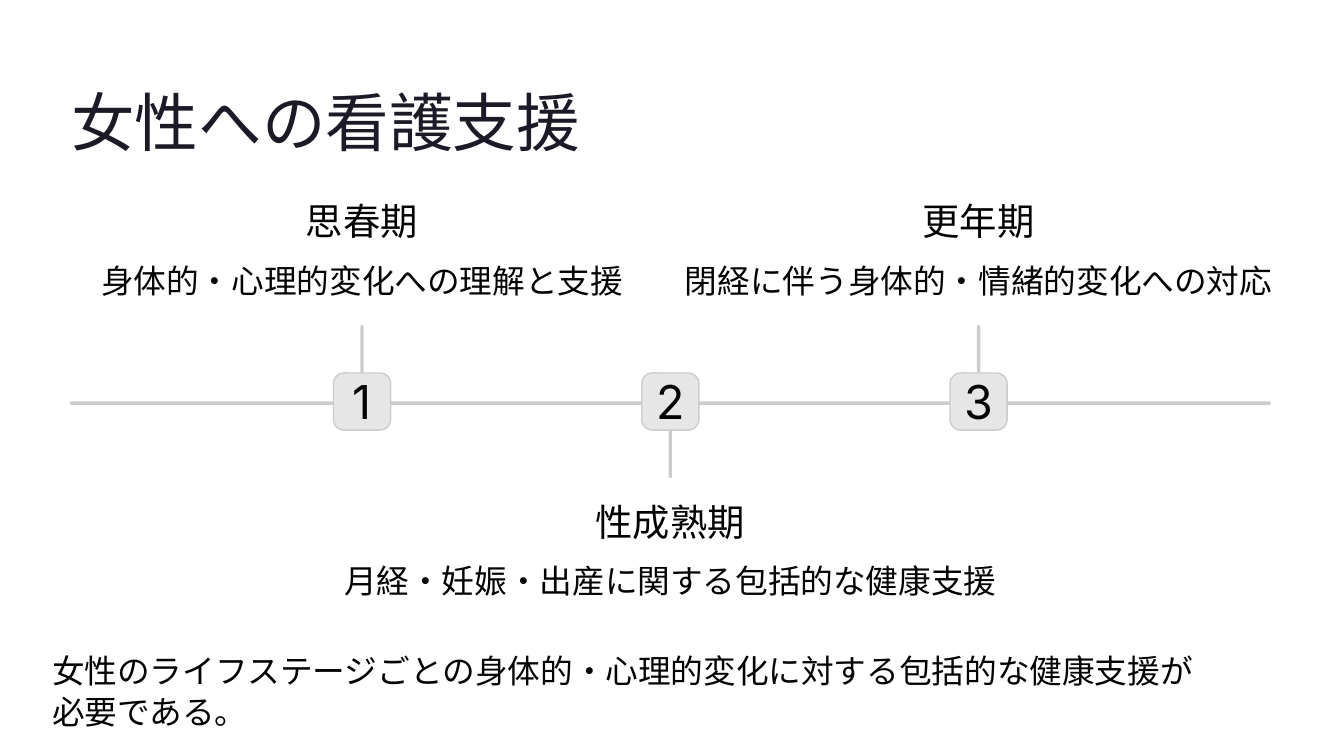
from pptx import Presentation
from pptx.dml.color import RGBColor
from pptx.enum.shapes import MSO_SHAPE
from pptx.enum.text import PP_ALIGN
from pptx.util import Inches, Pt

ROUNDED = MSO_SHAPE.ROUNDED_RECTANGLE
LEFT, CENTER = PP_ALIGN.LEFT, PP_ALIGN.CENTER

INK, TITLE_INK = "030303", "1B1B27"
BAR_GRAY, MARKER_GRAY = "CCCCCC", "E6E6E6"

FIRST_CENTER, STAGE_STEP = 4.31, 3.67
AXIS_TOP, BAR_WIDTH = 4.78, 0.04
STEM_LENGTH, MARKER_SIZE = 0.91, 0.68
TEXT_ABOVE, TEXT_BELOW = 2.42, 6.0

# Name, support and the width that keeps the support on one line
STAGES = [
    ("思春期", "身体的・心理的変化への理解と支援", 6.35),
    ("性成熟期", "月経・妊娠・出産に関する包括的な健康支援", 8.0),
    ("更年期", "閉経に伴う身体的・情緒的変化への対応", 7.2),
]
SUMMARY = [
    "女性のライフステージごとの身体的・心理的変化に対する包括的な健康支援が",
    "必要である。",
]


def color(hex_value):
    return RGBColor.from_string(hex_value)


def add_text(slide, lines, left, top, width, height, size, spacing,
             font="Inter", ink=INK, align=LEFT):
    box = slide.shapes.add_textbox(
        Inches(left), Inches(top), Inches(width), Inches(height))
    frame = box.text_frame
    frame.margin_left = frame.margin_right = 0
    frame.margin_top = frame.margin_bottom = 0
    frame.word_wrap = False
    frame.text = "\n".join(lines)
    for paragraph in frame.paragraphs:
        paragraph.alignment = align
        paragraph.line_spacing = Pt(spacing)
        paragraph.font.name = font
        paragraph.font.size = Pt(size)
        paragraph.font.color.rgb = color(ink)


def add_centered_text(slide, text, center, top, width, height, size, spacing,
                      font="Inter"):
    add_text(slide, [text], center - width / 2, top, width, height,
             size, spacing, font, align=CENTER)


def add_rounded(slide, left, top, width, height, fill, rounding):
    shape = slide.shapes.add_shape(
        ROUNDED, Inches(left), Inches(top), Inches(width), Inches(height))
    shape.adjustments[0] = rounding
    shape.shadow.inherit = False
    shape.fill.solid()
    shape.fill.fore_color.rgb = color(fill)
    return shape


def add_bar(slide, left, top, width, height):
    bar = add_rounded(slide, left, top, width, height, BAR_GRAY, 0.5)
    bar.line.fill.background()


def add_marker(slide, number, center):
    marker = add_rounded(slide, center - MARKER_SIZE / 2, 4.44,
                         MARKER_SIZE, MARKER_SIZE, MARKER_GRAY, 0.187)
    marker.line.color.rgb = color(BAR_GRAY)
    marker.line.width = Pt(1.2)
    add_centered_text(slide, str(number), center, 4.65, 0.46, 0.57, 40, 32.5)


def add_stage(slide, index, name, support, support_width):
    """Place a stage on the axis, its text alternately above and below."""
    center = FIRST_CENTER + index * STAGE_STEP
    above = index % 2 == 0
    stem_top = AXIS_TOP - STEM_LENGTH if above else AXIS_TOP
    text_top = TEXT_ABOVE if above else TEXT_BELOW
    add_bar(slide, center - BAR_WIDTH / 2, stem_top, BAR_WIDTH, STEM_LENGTH)
    add_marker(slide, index + 1, center)
    add_centered_text(slide, name, center, text_top, 3.8, 0.47, 32, 34)
    add_centered_text(slide, support, center, text_top + 0.66, support_width,
                      0.49, 28, 35, "Cabin")


def main():
    presentation = Presentation()
    presentation.slide_width = Inches(16)
    presentation.slide_height = Inches(9)
    slide = presentation.slides.add_slide(presentation.slide_layouts[6])

    add_text(slide, ["女性への看護支援"], 0.85, 0.95, 7.6, 0.95, 54.5, 68,
             ink=TITLE_INK)
    add_bar(slide, 0.83, AXIS_TOP, 14.3, BAR_WIDTH)
    for index, stage in enumerate(STAGES):
        add_stage(slide, index, *stage)
    add_text(slide, SUMMARY, 0.62, 7.73, 14.3, 0.98, 28, 35, "Cabin")

    presentation.save("out.pptx")


if __name__ == "__main__":
    main()
